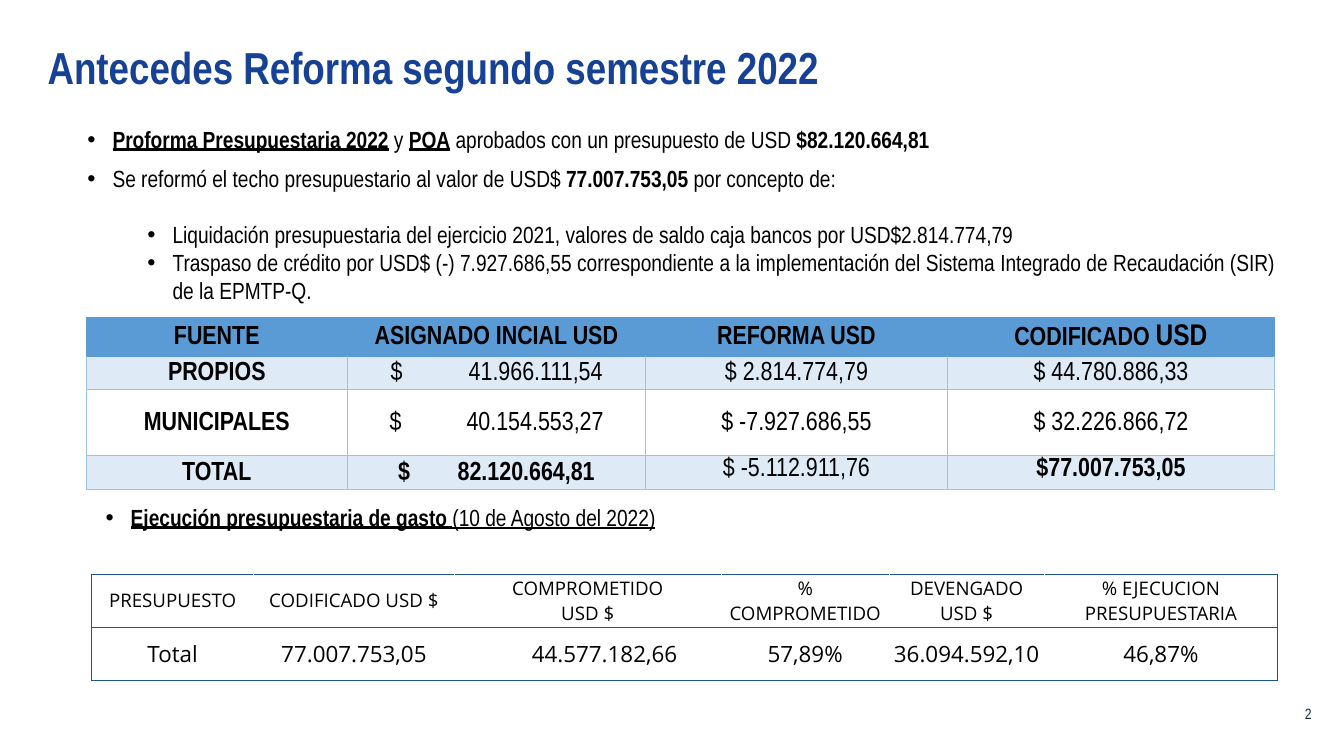
import pptx
import pptx.util
import pptx.dml.color
import pptx.enum.text
import pptx.oxml
import pptx.oxml.ns
from lxml import etree

Pt = pptx.util.Pt
ALIGN = pptx.enum.text.PP_ALIGN
ANCHOR = pptx.enum.text.MSO_ANCHOR
qn = pptx.oxml.ns.qn

NARROW, SANS = "Arial Narrow", "Open Sans"
BLACK, WHITE = "000000", "FFFFFF"
HEADER_BLUE, BAND_BLUE, GRID_BLUE = "5B9BD5", "DEEAF6", "9CC2E5"
FRAME_BLUE = "1B587C"

TITLE = "Antecedes Reforma segundo semestre 2022"
BACKGROUND = [
    {"runs": [("Proforma Presupuestaria 2022", "bu"), (" y ", ""), ("POA", "bu"),
              (" aprobados con un presupuesto de USD ", ""), ("$82.120.664,81", "b")],
     "after": 12},
    {"runs": [("Se reformó el techo presupuestario al valor de USD$ ", ""),
              ("77.007.753,05 ", "b"), ("por concepto de:", "")]},
    {"runs": [("Liquidación presupuestaria del ejercicio 2021, valores de saldo "
               "caja bancos por USD$2.814.774,79", "")], "level": 1, "before": 30},
    {"runs": [("Traspaso de crédito por USD$ (-) 7.927.686,55 correspondiente a la "
               "implementación del Sistema Integrado de Recaudación (SIR) de la "
               "EPMTP-Q.", "")], "level": 1},
]
EXECUTION = [{"runs": [("Ejecución presupuestaria de gasto ", "bu"),
                       ("(10 de Agosto del 2022)", "u")]}]
SOURCES = [
    ["FUENTE", "ASIGNADO INCIAL USD", "REFORMA USD", "CODIFICADO "],
    ["PROPIOS", "$\t41.966.111,54", "$ 2.814.774,79", "$ 44.780.886,33"],
    ["MUNICIPALES", "$\t40.154.553,27", "$ -7.927.686,55", "$ 32.226.866,72"],
    ["TOTAL", "$\t82.120.664,81", "$ -5.112.911,76", "$77.007.753,05"],
]
SOURCE_COLUMNS = [279.5, 319.5, 323.5, 350.5]
SOURCE_ROWS = [36, 34, 70.5, 34]
SOURCE_FILLS = [HEADER_BLUE, BAND_BLUE, None, BAND_BLUE]
AMOUNT_EDGES = {1: (46.5, 273.5), 2: (45.5, 274.5), 3: (54.5, 265)}
SPENDING = [
    ["PRESUPUESTO", "CODIFICADO USD $", "COMPROMETIDO\nUSD $", "% COMPROMETIDO",
     "DEVENGADO\nUSD $", "% EJECUCION PRESUPUESTARIA"],
    ["Total", "77.007.753,05", "44.577.182,66", "57,89%", "36.094.592,10", "46,87%"],
]
SPENDING_COLUMNS = [174, 214.5, 286.5, 179.5, 166.5, 250]
SPENDING_ROWS = [57, 57]
COMMITTED_INDENT = 36


def color(value):
    return pptx.dml.color.RGBColor.from_string(value)


def style(font, name, size, value=BLACK, bold=False):
    font.name, font.size, font.bold = name, Pt(size), bold
    font.color.rgb = color(value)


def add_element(paragraph, tag, **attributes):
    return etree.SubElement(paragraph._p.get_or_add_pPr(), qn(tag), attributes)


def add_bullets(slide, box, items, alignment):
    frame = slide.shapes.add_textbox(*map(Pt, box)).text_frame
    frame.word_wrap = True
    for index, item in enumerate(items):
        paragraph = frame.add_paragraph() if index else frame.paragraphs[0]
        level = item.get("level", 0)
        paragraph.level = level
        paragraph.alignment = alignment
        properties = paragraph._p.get_or_add_pPr()
        properties.set("marL", str(Pt(27 + 64.3 * level)))
        properties.set("indent", str(Pt(-27)))
        paragraph.space_before = Pt(item.get("before", 0))
        paragraph.space_after = Pt(item.get("after", 0))
        add_element(paragraph, "a:buFont", typeface="Arial")
        add_element(paragraph, "a:buChar", char="•")
        style(paragraph.font, NARROW, 25)
        for text, marks in item["runs"]:
            run = paragraph.add_run()
            run.text = text
            run.font.bold = "b" in marks
            run.font.underline = "u" in marks


def add_table(slide, left, top, columns, rows):
    table = slide.shapes.add_table(len(rows), len(columns), Pt(left), Pt(top),
                                   Pt(sum(columns)), Pt(sum(rows))).table
    table.first_row = table.horz_banding = False
    for column, width in zip(table.columns, columns):
        column.width = Pt(width)
    for row, height in zip(table.rows, rows):
        row.height = Pt(height)
    return table


def format_cell(cell, text, fill, borders, margin):
    cell.margin_left = cell.margin_right = Pt(margin)
    cell.margin_top = cell.margin_bottom = 0
    cell.vertical_anchor = ANCHOR.MIDDLE
    properties = cell._tc.get_or_add_tcPr()
    for side in "LRTB":
        if side in borders:
            line = etree.SubElement(properties, qn("a:ln" + side), w=str(Pt(1)))
            solid = etree.SubElement(line, qn("a:solidFill"))
            etree.SubElement(solid, qn("a:srgbClr"), val=borders[side])
    if fill:
        cell.fill.solid()
        cell.fill.fore_color.rgb = color(fill)
    else:
        cell.fill.background()
    cell.text = text
    for paragraph in cell.text_frame.paragraphs:
        paragraph.alignment = ALIGN.CENTER


def add_sources(slide):
    table = add_table(slide, 92.5, 340.5, SOURCE_COLUMNS, SOURCE_ROWS)
    for r, values in enumerate(SOURCES):
        for c, value in enumerate(values):
            cell = table.cell(r, c)
            borders = dict.fromkeys("LRTB", HEADER_BLUE if r == 0 else GRID_BLUE)
            if r == 1:
                borders["T"] = HEADER_BLUE
            format_cell(cell, value, SOURCE_FILLS[r], borders, 5)
            paragraph = cell.text_frame.paragraphs[0]
            paragraph.line_spacing = 1.07
            paragraph.space_after = Pt(8)
            if "\t" in value:
                start, end = AMOUNT_EDGES[r]
                cell.margin_left = Pt(start)
                paragraph.alignment = ALIGN.LEFT
                tabs = add_element(paragraph, "a:tabLst")
                etree.SubElement(tabs, qn("a:tab"), pos=str(Pt(end - start)), algn="r")
            total = r == len(SOURCES) - 1
            style(paragraph.font, NARROW, 28, bold=r == 0 or c == 0 or total and c != 2)
            if total and c > 1:
                cell.vertical_anchor = ANCHOR.TOP
    unit = table.cell(0, 3).text_frame.paragraphs[0].add_run()
    unit.text = "USD"
    unit.font.size = Pt(32)


def add_spending(slide):
    table = add_table(slide, 98, 615, SPENDING_COLUMNS, SPENDING_ROWS)
    last = len(SPENDING_COLUMNS) - 1
    for r, values in enumerate(SPENDING):
        for c, value in enumerate(values):
            cell = table.cell(r, c)
            borders = {"L": FRAME_BLUE if c == 0 else WHITE,
                       "R": FRAME_BLUE if c == last else WHITE,
                       "T": FRAME_BLUE, "B": FRAME_BLUE}
            format_cell(cell, value, WHITE, borders, 0)
            for paragraph in cell.text_frame.paragraphs:
                style(paragraph.font, SANS, 24 if r else 20)
    table.cell(1, 2).margin_left = Pt(COMMITTED_INDENT)


def add_title(slide):
    title = slide.shapes.title
    title.left, title.top, title.width, title.height = map(Pt, (38, 35.5, 1170, 71))
    frame = title.text_frame
    frame.text = TITLE
    frame.auto_size = pptx.enum.text.MSO_AUTO_SIZE.NONE
    frame.vertical_anchor = ANCHOR.MIDDLE
    frame.margin_left = frame.margin_right = Pt(13)
    frame.margin_top = frame.margin_bottom = Pt(6.5)
    paragraph = frame.paragraphs[0]
    paragraph.alignment = ALIGN.LEFT
    style(paragraph.font, NARROW, 48, "164194", True)


def add_page_number(slide):
    frame = slide.shapes.add_textbox(Pt(1368), Pt(743), Pt(67.5), Pt(43)).text_frame
    frame.word_wrap = True
    frame.vertical_anchor = ANCHOR.MIDDLE
    paragraph = frame.paragraphs[0]
    paragraph.text = "2"
    paragraph.alignment = ALIGN.CENTER
    style(paragraph.font, NARROW, 16, "0E2C3E")


def main():
    presentation = pptx.Presentation()
    presentation.slide_width, presentation.slide_height = Pt(1440), Pt(810)
    slide = presentation.slides.add_slide(presentation.slide_layouts[5])
    add_title(slide)
    add_page_number(slide)
    add_bullets(slide, (86.5, 130.5, 1286.5, 201), BACKGROUND, ALIGN.JUSTIFY)
    add_sources(slide)
    add_spending(slide)
    add_bullets(slide, (106, 535.5, 1035.5, 91), EXECUTION, ALIGN.LEFT)
    presentation.save("out.pptx")


if __name__ == "__main__":
    main()
